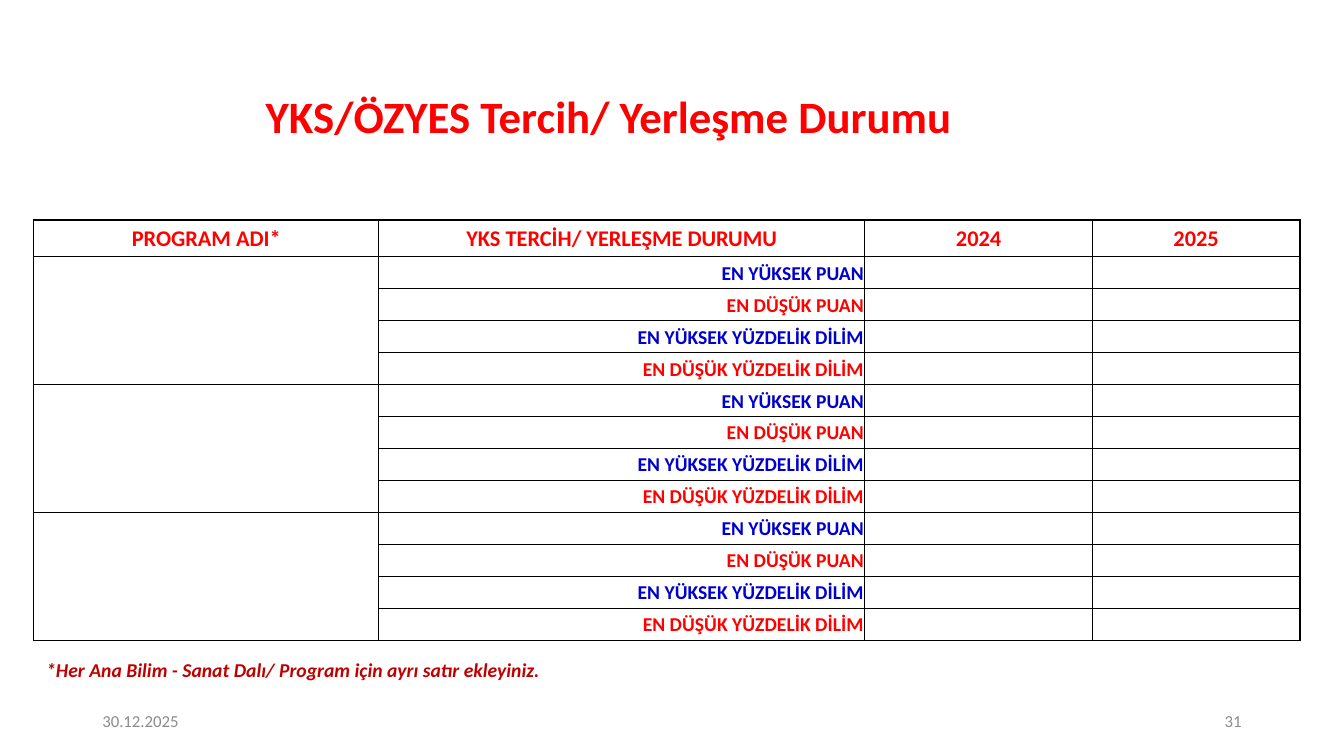
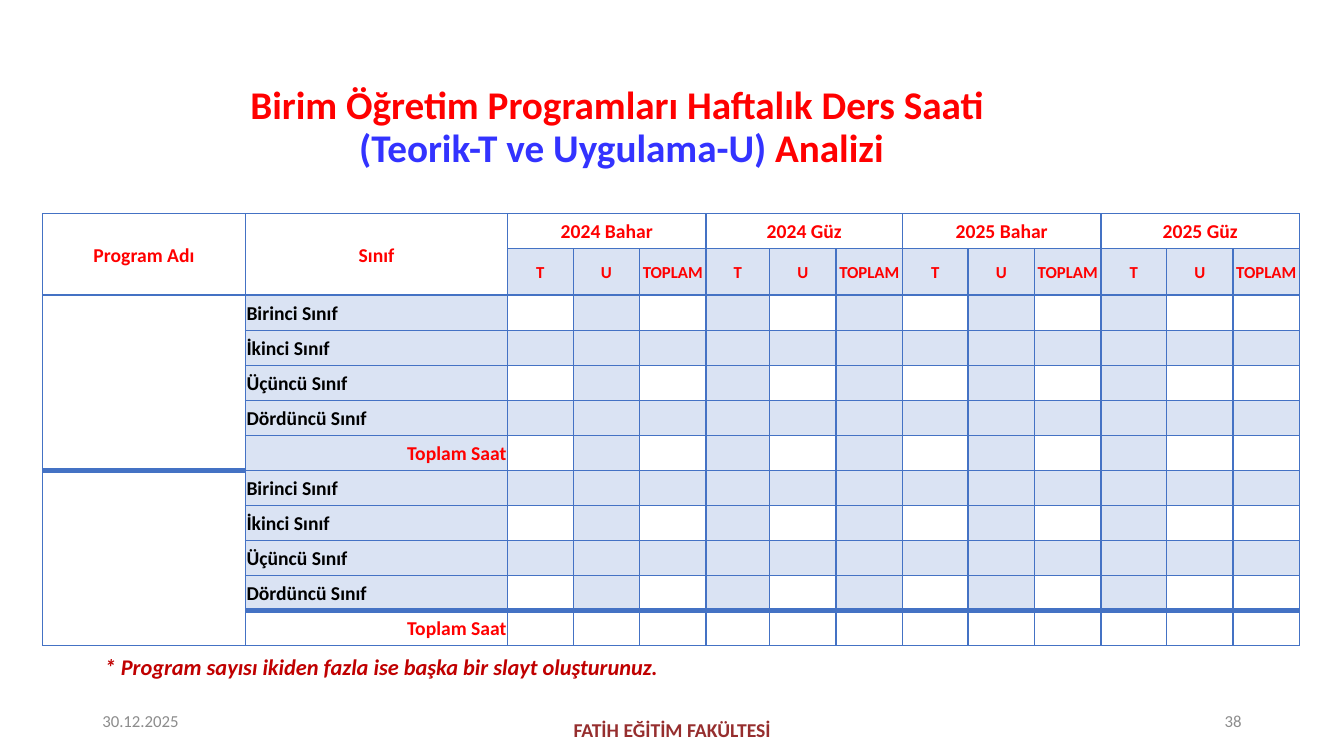
from lxml import etree
from pptx import Presentation
from pptx.dml.color import RGBColor
from pptx.enum.text import MSO_ANCHOR, MSO_AUTO_SIZE, PP_ALIGN
from pptx.oxml.ns import qn
from pptx.util import Pt

LEFT, CENTER, RIGHT = PP_ALIGN.LEFT, PP_ALIGN.CENTER, PP_ALIGN.RIGHT
TOP, MIDDLE = MSO_ANCHOR.TOP, MSO_ANCHOR.MIDDLE
NO_AUTO_SIZE = MSO_AUTO_SIZE.NONE

FONT = "Calibri"
RED, DARK_RED, MAROON = "FF0000", "C00000", "962E2E"
BLUE, TITLE_BLUE = "0000CC", "3333FF"
BLACK, GREY = "000000", "8C8C8C"
GRID_BLUE, PALE_BLUE = "4472C4", "DAE3F3"
TITLE_ONLY = 5

DATE = "30.12.2025"
FACULTY = "FATİH EĞİTİM FAKÜLTESİ"

SCORE_TITLE = [[("YKS/ÖZYES Tercih/ Yerleşme Durumu", RED)]]
SCORE_HEADERS = ["PROGRAM ADI*", "YKS TERCİH/ YERLEŞME DURUMU", "2024", "2025"]
SCORE_LABELS = [
    ("EN YÜKSEK PUAN", BLUE),
    ("EN DÜŞÜK PUAN", RED),
    ("EN YÜKSEK YÜZDELİK DİLİM", BLUE),
    ("EN DÜŞÜK YÜZDELİK DİLİM", RED),
]
SCORE_PROGRAMS = 3
SCORE_COLUMNS = [246.3, 347.3, 162.5, 148.3]
SCORE_NOTE = "*Her Ana Bilim - Sanat Dalı/ Program için ayrı satır ekleyiniz."

HOURS_TITLE = [
    [("Birim Öğretim Programları Haftalık Ders Saati ", RED)],
    [("(Teorik-T ve Uygulama-U) ", TITLE_BLUE), ("Analizi", RED)],
]
HOURS_HEADERS = ["Program Adı", "Sınıf"]
TERMS = ["2024 Bahar", "2024 Güz", "2025 Bahar", "2025 Güz"]
HOUR_KINDS = ["T", "U", "TOPLAM"]
CLASS_LABELS = [
    ("Birinci Sınıf", BLACK, LEFT),
    ("İkinci Sınıf", BLACK, LEFT),
    ("Üçüncü Sınıf", BLACK, LEFT),
    ("Dördüncü Sınıf", BLACK, LEFT),
    ("Toplam Saat", RED, RIGHT),
]
HOURS_PROGRAMS = 2
HOURS_COLUMNS = [145, 187.2] + [46.8, 47.5, 47.5, 45.4, 47.5, 47.5] + [46.8, 47.5, 47.5] * 2
HOURS_NOTE = "* Program sayısı ikiden fazla ise başka bir slayt oluşturunuz."


def color(value):
    return RGBColor.from_string(value)


def write_text(frame, lines, size, align=LEFT, bold=False, italic=False, spacing=None):
    """Fill the first paragraph; each line is a list of (text, colour) runs."""
    paragraph = frame.paragraphs[0]
    paragraph.alignment = align
    if spacing:
        paragraph.line_spacing = spacing
    for number, line in enumerate(lines):
        if number:
            paragraph.add_line_break()
            line_break = paragraph._p.findall(qn("a:br"))[-1]
            etree.SubElement(line_break, qn("a:rPr"), sz=str(size * 100))
        for text, run_color in line:
            run = paragraph.add_run()
            run.text = text
            run.font.name = FONT
            run.font.size = Pt(size)
            run.font.bold = bold
            run.font.italic = italic
            run.font.color.rgb = color(run_color)


def add_text(slide, box, text, text_color, size, anchor=TOP, **text_format):
    frame = slide.shapes.add_textbox(*map(Pt, box)).text_frame
    frame.word_wrap = True
    frame.vertical_anchor = anchor
    write_text(frame, [[(text, text_color)]], size, **text_format)


def add_slide(presentation, title_lines, title_box, title_size, number):
    """Add a slide with its title, date and slide number."""
    slide = presentation.slides.add_slide(presentation.slide_layouts[TITLE_ONLY])
    title = slide.shapes.title
    title.left, title.top, title.width, title.height = map(Pt, title_box)
    frame = title.text_frame
    frame.auto_size = NO_AUTO_SIZE
    frame.vertical_anchor = MIDDLE
    write_text(frame, title_lines, title_size, align=CENTER, bold=True, spacing=0.9)
    for left, text, align in ((66, DATE, LEFT), (678, number, RIGHT)):
        add_text(slide, (left, 500.4, 216, 28.8), text, GREY, 12, anchor=MIDDLE, align=align)
    return slide


def add_grid(slide, left, top, columns, rows):
    """Add a table without style bands, margins or fills."""
    frame = slide.shapes.add_table(len(rows), len(columns), Pt(left), Pt(top),
                                   Pt(sum(columns)), Pt(sum(rows)))
    table = frame.table
    table.first_row = table.horz_banding = False
    for column, width in zip(table.columns, columns):
        column.width = Pt(width)
    for row, height in zip(table.rows, rows):
        row.height = Pt(height)
    for cell in table.iter_cells():
        cell.margin_left = cell.margin_right = Pt(0.72)
        cell.margin_top = cell.margin_bottom = 0
        cell.vertical_anchor = MIDDLE
    return table


def merge(table, row, column, height=1, width=1):
    table.cell(row, column).merge(table.cell(row + height - 1, column + width - 1))


def write_cell(table, row, column, text, text_color, size, align=CENTER):
    write_text(table.cell(row, column).text_frame, [[(text, text_color)]], size,
               align=align, bold=True, spacing=1.07)


def paint_grid(table, line_color, edge_width, is_filled):
    """Draw borders and fills; edge_width gives the line above a row in a column."""
    for row in range(len(table.rows)):
        for column in range(len(table.columns)):
            cell = table.cell(row, column)
            below = row + (cell.span_height if cell.is_merge_origin else 1)
            widths = {"lnL": 1, "lnR": 1, "lnT": edge_width(row, column),
                      "lnB": edge_width(below, column)}
            properties = cell._tc.get_or_add_tcPr()
            for side, width in widths.items():
                line = etree.SubElement(properties, qn("a:" + side), w=str(Pt(width)))
                fill = etree.SubElement(line, qn("a:solidFill"))
                etree.SubElement(fill, qn("a:srgbClr"), val=line_color)
            if is_filled(row, column):
                cell.fill.solid()
                cell.fill.fore_color.rgb = color(PALE_BLUE)
            else:
                cell.fill.background()


def build_scores(presentation):
    slide = add_slide(presentation, SCORE_TITLE, (24.5, 59, 820.8, 52.6), 32, "31")
    block = len(SCORE_LABELS)
    rows = [26] + [22.86] * (block * SCORE_PROGRAMS)
    table = add_grid(slide, 24.2, 157.2, SCORE_COLUMNS, rows)
    for column, text in enumerate(SCORE_HEADERS):
        write_cell(table, 0, column, text, RED, 16)
    for first in range(1, len(rows), block):
        merge(table, first, 0, height=block)
        for offset, (text, text_color) in enumerate(SCORE_LABELS):
            write_cell(table, first + offset, 1, text, text_color, 14, RIGHT)
    paint_grid(table, BLACK, lambda row, column: 1, lambda row, column: False)
    add_text(slide, (25.9, 466.6, 499, 24.5), SCORE_NOTE, DARK_RED, 14, bold=True, italic=True)


def hours_edge(row, column):
    if (column == 0 and row == 7) or (column > 0 and row == 11):
        return 4
    return 2 if column < 2 and row == 2 else 1


def hours_filled(row, column):
    if column == 0 or row in (0, 11):
        return False
    if column == 1:
        return row > 1
    return row % 2 == 1 or (column % 2 == 1 and column < 13)


def build_hours(presentation):
    slide = add_slide(presentation, HOURS_TITLE, (43.2, 62.6, 801.4, 58.3), 28, "38")
    add_text(slide, (318.2, 506.9, 324, 28.8), FACULTY, MAROON, 14, anchor=MIDDLE,
             align=CENTER, bold=True)
    add_text(slide, (67.7, 463, 551.5, 26.6), HOURS_NOTE, DARK_RED, 16, bold=True, italic=True)
    block = len(CLASS_LABELS)
    rows = [25, 33] + [25.07] * (block * HOURS_PROGRAMS)
    table = add_grid(slide, 30.4, 152.8, HOURS_COLUMNS, rows)
    for column, text in enumerate(HOURS_HEADERS):
        merge(table, 0, column, height=2)
        write_cell(table, 0, column, text, RED, 14)
    for term_number, term in enumerate(TERMS):
        first = len(HOURS_HEADERS) + term_number * len(HOUR_KINDS)
        merge(table, 0, first, width=len(HOUR_KINDS))
        write_cell(table, 0, first, term, RED, 14)
        for offset, kind in enumerate(HOUR_KINDS):
            cell = table.cell(1, first + offset)
            cell.margin_left = cell.margin_right = 0
            write_cell(table, 1, first + offset, kind, RED, 12)
    for first in range(2, len(rows), block):
        merge(table, first, 0, height=block)
        for offset, (text, text_color, align) in enumerate(CLASS_LABELS):
            write_cell(table, first + offset, 1, text, text_color, 14, align)
    paint_grid(table, GRID_BLUE, hours_edge, hours_filled)


def main():
    presentation = Presentation()
    presentation.slide_width, presentation.slide_height = Pt(960), Pt(540)
    build_scores(presentation)
    build_hours(presentation)
    presentation.save("out.pptx")


if __name__ == "__main__":
    main()
